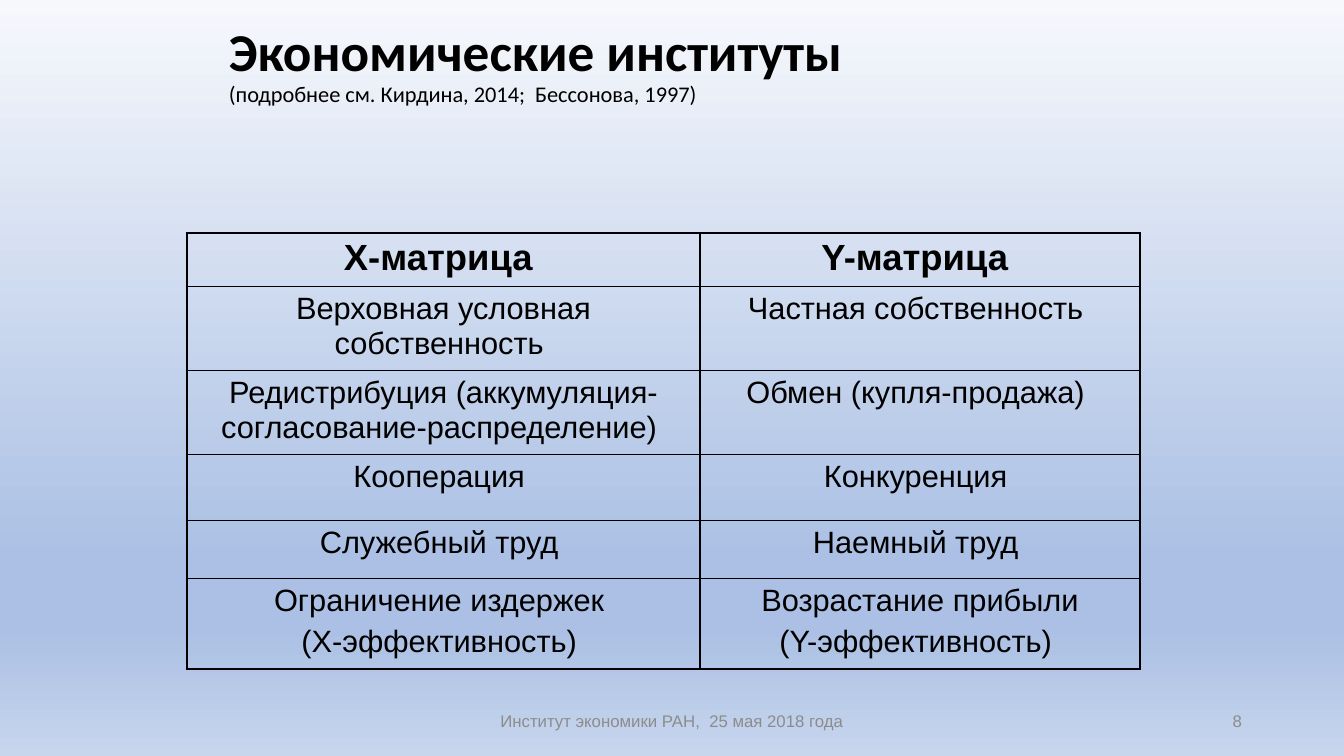
from lxml.etree import SubElement
from pptx import Presentation
from pptx.dml.color import RGBColor
from pptx.enum.text import MSO_ANCHOR, PP_ALIGN
from pptx.oxml.ns import qn
from pptx.util import Pt

BLACK = RGBColor(0x00, 0x00, 0x00)
GRAY = RGBColor(0x8C, 0x8C, 0x8C)
PALE = RGBColor(0xF6, 0xF8, 0xFC)
BLUE = RGBColor(0xAB, 0xC0, 0xE4)
SOFT_BLUE = RGBColor(0xC7, 0xD5, 0xED)
BACKGROUND = [(0, PALE), (74, BLUE), (83, BLUE), (100, SOFT_BLUE)]

TITLE = "Экономические институты"
SOURCES = "(подробнее см. Кирдина, 2014;  Бессонова, 1997)"
FOOTER = "Институт экономики РАН,  25 мая 2018 года"
PAGE_NUMBER = "8"
INSTITUTIONS = [
    ("Х-матрица ", "Y-матрица "),
    ("Верховная условная собственность ", "Частная собственность "),
    ("Редистрибуция (аккумуляция-согласование-распределение) ", "Обмен (купля-продажа) "),
    ("Кооперация ", "Конкуренция "),
    ("Служебный труд ", "Наемный труд "),
    ("Ограничение издержек \n(Х-эффективность) ", "Возрастание прибыли\n(Y-эффективность) "),
]
COLUMN_WIDTHS = [513, 440]
ROW_HEIGHTS = [50, 83, 82, 66, 58, 85]
THIN, THICK = 1, 2.25


def px(length):
    return round(length * 914400 / 100.8)


def add_span(para, text, size, font="Arial", color=BLACK, bold=False):
    span = para.add_run()
    span.text = text
    span.font.size = Pt(size)
    span.font.name = font
    span.font.color.rgb = color
    span.font.bold = bold


def write(frame, text, align=PP_ALIGN.LEFT, gap=0, **style):
    for index, line in enumerate(text.split("\n")):
        para = frame.add_paragraph() if index else frame.paragraphs[0]
        para.alignment = align
        if index:
            para.space_before = Pt(gap)
        add_span(para, line, **style)
    return para


def add_box(page, left, top, width, height):
    frame = page.shapes.add_textbox(px(left), px(top), px(width), px(height)).text_frame
    frame.word_wrap = True
    frame.vertical_anchor = MSO_ANCHOR.MIDDLE
    return frame


def paint_background(page):
    fill = page.background.fill
    fill.gradient()
    fill.gradient_angle = 270
    stops = page.element.find(".//" + qn("a:gsLst"))
    for stop in list(stops):
        stops.remove(stop)
    for position, color in BACKGROUND:
        stop = SubElement(stops, qn("a:gs"), pos=str(position * 1000))
        SubElement(stop, qn("a:srgbClr"), val=str(color))


def set_borders(cell, **widths):
    properties = cell._tc.get_or_add_tcPr()
    for index, side in enumerate("LRTB"):
        line = properties.makeelement(qn("a:ln" + side), {"w": str(Pt(widths[side]))})
        fill = SubElement(line, qn("a:solidFill"))
        SubElement(fill, qn("a:srgbClr"), val=str(BLACK))
        properties.insert(index, line)


def add_institutions(page):
    last_row, last_column = len(ROW_HEIGHTS) - 1, len(COLUMN_WIDTHS) - 1
    table = page.shapes.add_table(
        len(ROW_HEIGHTS), len(COLUMN_WIDTHS), px(187), px(233),
        px(sum(COLUMN_WIDTHS)), px(sum(ROW_HEIGHTS))).table
    table.first_row = False
    table.horz_banding = False
    for column, width in zip(table.columns, COLUMN_WIDTHS):
        column.width = px(width)
    for r, (row, height) in enumerate(zip(table.rows, ROW_HEIGHTS)):
        row.height = px(height)
        for c, cell in enumerate(row.cells):
            cell.fill.background()
            set_borders(cell,
                        L=THIN if c else THICK,
                        R=THICK if c == last_column else THIN,
                        T=THIN if r else THICK,
                        B=THICK if r == last_row else THIN)
            write(cell.text_frame, INSTITUTIONS[r][c], align=PP_ALIGN.CENTER,
                  gap=4.4, size=22 if r else 26, bold=r == 0)


def main():
    deck = Presentation()
    deck.slide_width, deck.slide_height = px(1344), px(756)
    page = deck.slides.add_slide(deck.slide_layouts[6])
    paint_background(page)

    heading = write(add_box(page, 219, 13, 832, 107), TITLE, size=38, font="Calibri", bold=True)
    heading.line_spacing = 0.9
    heading.add_line_break()
    add_span(heading, SOURCES, size=16, font="Calibri")

    add_institutions(page)
    write(add_box(page, 445, 701, 454, 40), FOOTER, align=PP_ALIGN.CENTER, size=12, color=GRAY)
    write(add_box(page, 950, 701, 302, 40), PAGE_NUMBER, align=PP_ALIGN.RIGHT, size=12, color=GRAY)
    deck.save("out.pptx")


if __name__ == "__main__":
    main()
